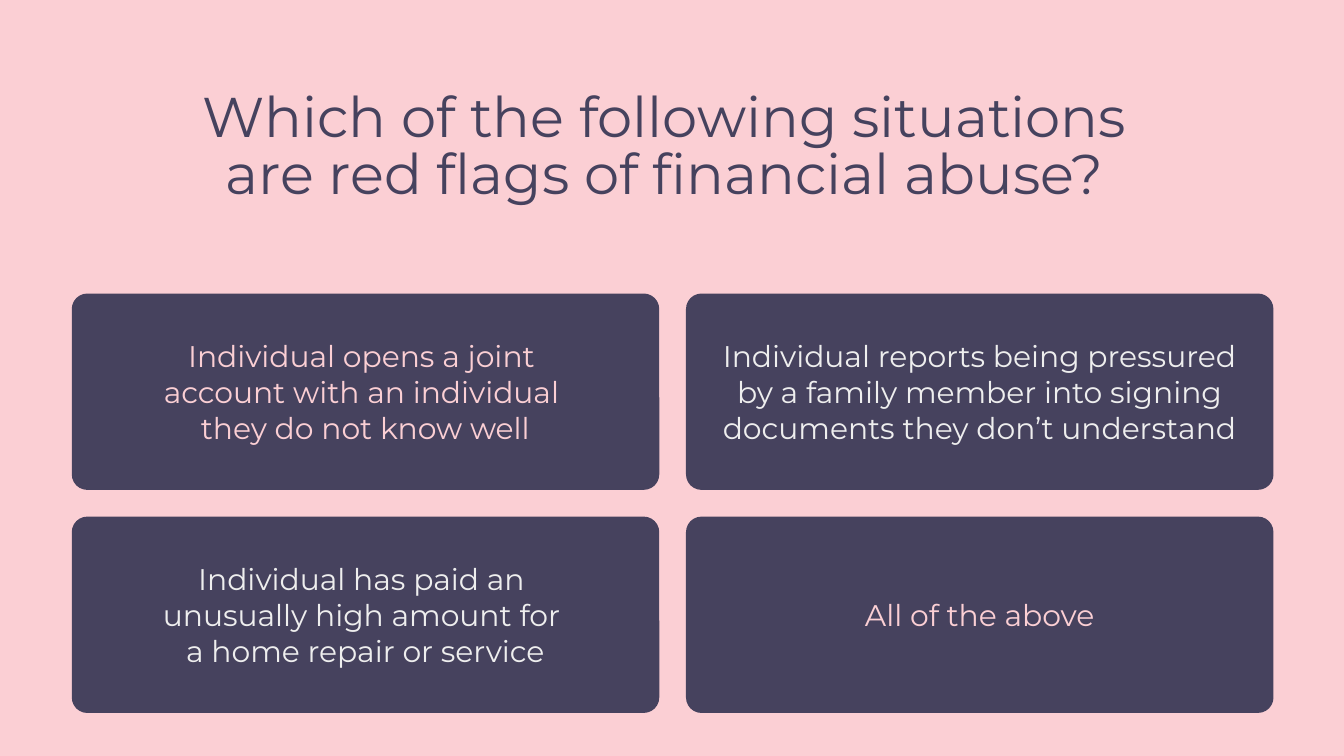
from pptx import Presentation
from pptx.dml.color import RGBColor
from pptx.enum.shapes import MSO_SHAPE as Shape
from pptx.enum.text import MSO_ANCHOR as Anchor, MSO_AUTO_SIZE as AutoSize, PP_ALIGN as Align
from pptx.util import Inches, Pt

PINK = RGBColor(0xFB, 0xCF, 0xD4)
INDIGO = RGBColor(0x46, 0x42, 0x5E)
PALE = RGBColor(0xEE, 0xEE, 0xEE)
FONT = "Montserrat"

QUESTION = [
    "Which of the following situations ",
    "are red flags of financial abuse? ",
]
# Rows of answers: paragraphs and text colour; a newline is a line break.
ANSWERS = [
    [
        (["Individual opens a joint \naccount with an individual ", "they do not know well"], PINK),
        (["Individual reports being pressured by a family member "
          "into signing documents they don’t understand"], PALE),
    ],
    [
        (["Individual has paid an \nunusually high amount for ", "a home repair or service"], PALE),
        (["All of the above"], PINK),
    ],
]


def write_text(frame, paragraphs, *, size, color, anchor=Anchor.MIDDLE, spacing=1.0):
    frame.word_wrap = True
    frame.auto_size = AutoSize.NONE
    frame.vertical_anchor = anchor
    frame.margin_left = frame.margin_right = Inches(0.1)
    frame.margin_top = frame.margin_bottom = Inches(0.1)
    for index, text in enumerate(paragraphs):
        paragraph = frame.add_paragraph() if index else frame.paragraphs[0]
        paragraph.text = text
        paragraph.alignment = Align.CENTER
        paragraph.line_spacing = spacing
        for run in paragraph.runs:
            run.font.name = FONT
            run.font.size = Pt(size)
            run.font.color.rgb = color


def place_question(slide, left, top, width, height):
    question = slide.shapes.title
    question.left, question.top = Inches(left), Inches(top)
    question.width, question.height = Inches(width), Inches(height)
    write_text(question.text_frame, QUESTION, size=30, color=INDIGO,
               anchor=Anchor.TOP, spacing=0.85)


def add_answer_card(slide, paragraphs, color, left, top, width, height):
    card = slide.shapes.add_shape(
        Shape.ROUNDED_RECTANGLE, Inches(left), Inches(top), Inches(width), Inches(height))
    card.adjustments[0] = 0.07
    card.shadow.inherit = False
    card.fill.solid()
    card.fill.fore_color.rgb = INDIGO
    card.line.color.rgb = INDIGO
    card.line.width = Pt(2.25)
    write_text(card.text_frame, paragraphs, size=16, color=color)


def add_answer_grid(slide, left, top, width, height, gap=0.23):
    card_width = (width - gap) / 2
    card_height = (height - gap) / 2
    for row, answers in enumerate(ANSWERS):
        for column, (paragraphs, color) in enumerate(answers):
            add_answer_card(slide, paragraphs, color,
                            left + column * (card_width + gap),
                            top + row * (card_height + gap),
                            card_width, card_height)


def main():
    deck = Presentation()
    deck.slide_width = Inches(10)
    deck.slide_height = deck.slide_width * 9 // 16
    slide = deck.slides.add_slide(deck.slide_layouts.get_by_name("Title Only"))
    slide.background.fill.solid()
    slide.background.fill.fore_color.rgb = PINK
    place_question(slide, 0.99, 0.58, 8.02, 1.05)
    add_answer_grid(slide, 0.55, 2.2, 8.91, 3.09)
    deck.save("out.pptx")


if __name__ == "__main__":
    main()
